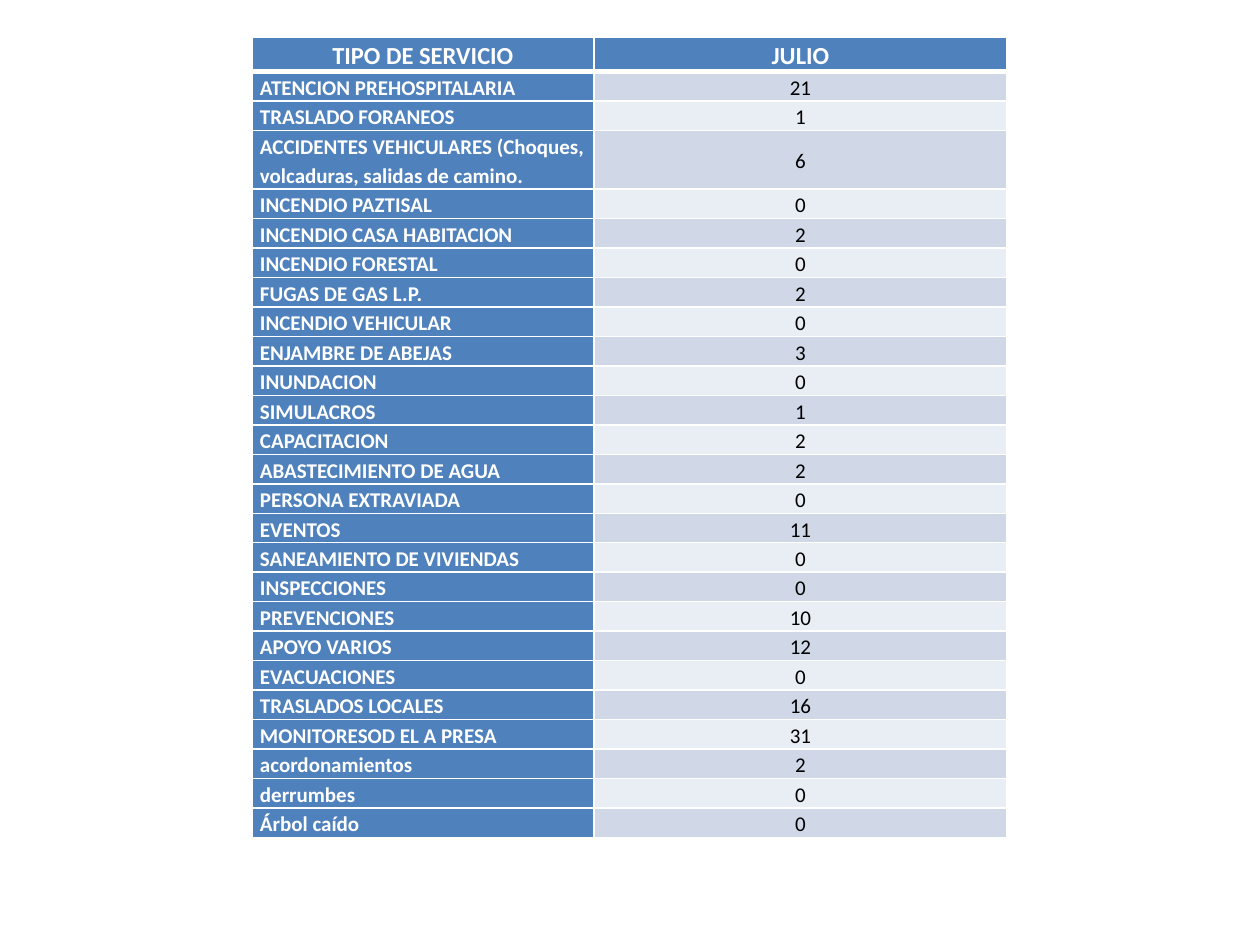
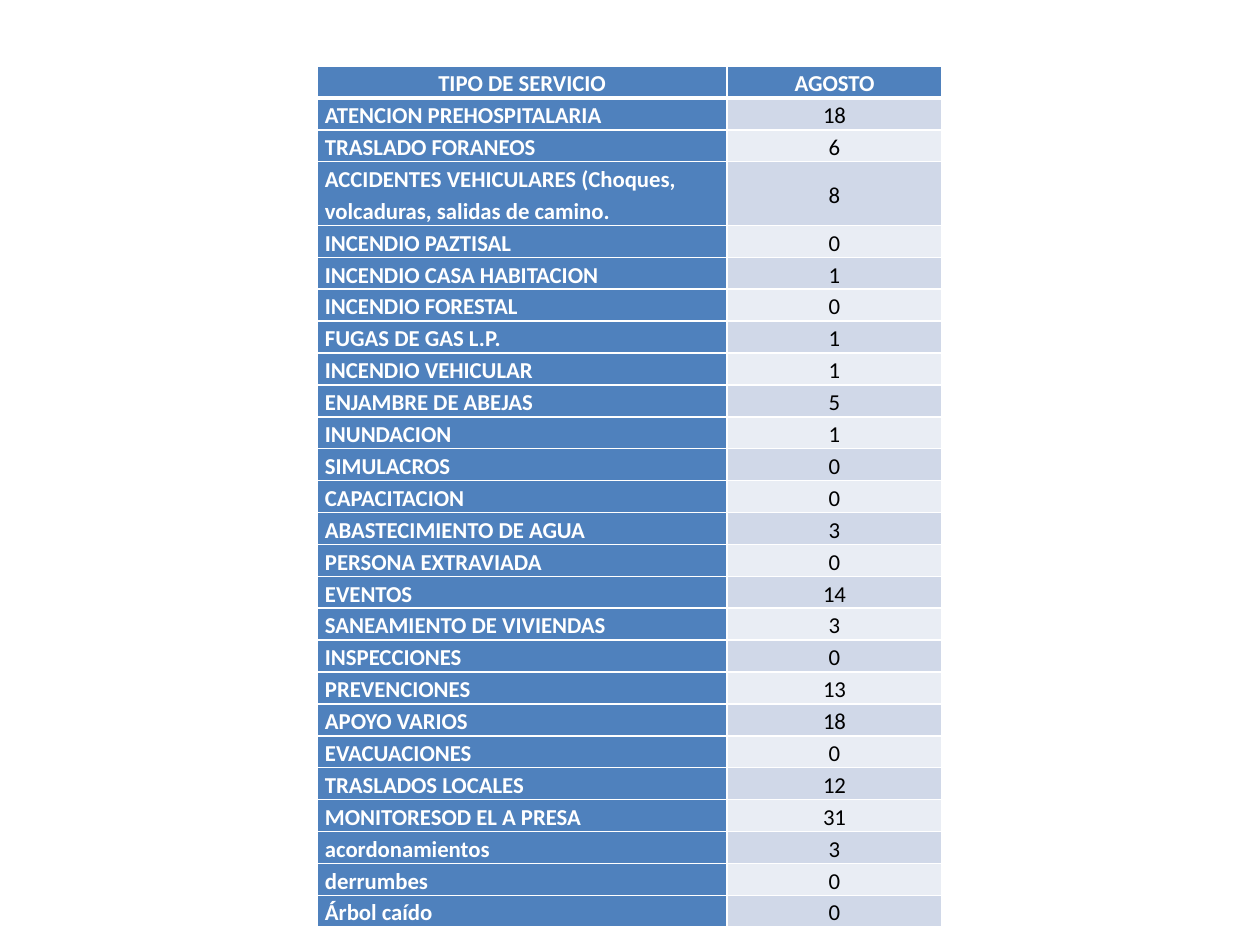
from lxml.etree import SubElement
from pptx import Presentation
from pptx.dml.color import RGBColor
from pptx.enum.text import MSO_ANCHOR, PP_ALIGN
from pptx.oxml.ns import qn
from pptx.util import Pt

PX = 914400 / 126
FONT = "Calibri"
BLUE, WHITE, BLACK = "4F81BD", "FFFFFF", "000000"
BANDS = ("D0D8E8", "E9EDF4")
TALL_ROW = 3

SERVICES = (
    "ATENCION PREHOSPITALARIA",
    "TRASLADO FORANEOS",
    "ACCIDENTES VEHICULARES (Choques, volcaduras, salidas de camino.",
    "INCENDIO PAZTISAL",
    "INCENDIO CASA HABITACION",
    "INCENDIO FORESTAL",
    "FUGAS DE GAS L.P.",
    "INCENDIO VEHICULAR",
    "ENJAMBRE DE ABEJAS",
    "INUNDACION",
    "SIMULACROS",
    "CAPACITACION",
    "ABASTECIMIENTO DE AGUA",
    "PERSONA EXTRAVIADA",
    "EVENTOS",
    "SANEAMIENTO DE VIVIENDAS",
    "INSPECCIONES",
    "PREVENCIONES",
    "APOYO VARIOS",
    "EVACUACIONES",
    "TRASLADOS LOCALES",
    "MONITORESOD EL A PRESA",
    "acordonamientos",
    "derrumbes",
    "Árbol caído",
)
JULY = (21, 1, 6, 0, 2, 0, 2, 0, 3, 0, 1, 2, 2, 0, 11, 0, 0, 10, 12, 0, 16, 31, 2, 0, 0)
AUGUST = (18, 6, 8, 0, 1, 0, 1, 1, 5, 1, 0, 0, 3, 0, 14, 3, 0, 13, 18, 0, 12, 31, 3, 0, 0)


def px(length):
    return round(length * PX)


def color(value):
    return RGBColor.from_string(value)


def write(cell, text, size, ink=WHITE, bold=True, align=PP_ALIGN.CENTER):
    paragraph = cell.text_frame.paragraphs[0]
    paragraph.alignment = align
    paragraph.line_spacing = 1.15
    run = paragraph.add_run()
    run.text = text
    run.font.name = FONT
    run.font.size = Pt(size)
    run.font.bold = bold
    run.font.color.rgb = color(ink)


def draw_borders(cell, top=1, bottom=1):
    properties = cell._tc.get_or_add_tcPr()
    for side, width in (("L", 1), ("R", 1), ("T", top), ("B", bottom)):
        line = SubElement(properties, qn(f"a:ln{side}"), w=str(Pt(width)))
        fill = SubElement(line, qn("a:solidFill"))
        SubElement(fill, qn("a:srgbClr"), val=WHITE)


def format_cell(cell, fill, **borders):
    cell.margin_left = cell.margin_right = px(8)
    cell.margin_top = cell.margin_bottom = 0
    draw_borders(cell, **borders)
    cell.fill.solid()
    cell.fill.fore_color.rgb = color(fill)


def add_services_table(slide, box, columns, row_height, month, counts, header_size, body_size):
    frame = slide.shapes.add_table(len(SERVICES) + 1, 2, *map(px, box))
    table = frame.table
    table.first_col = True
    for column, width in zip(table.columns, columns):
        column.width = px(width)
    for index, row in enumerate(table.rows):
        row.height = px(row_height * (2 if index == TALL_ROW else 1))
    frame.height = px(box[3])

    for column, heading in enumerate(("TIPO DE SERVICIO", month)):
        cell = table.cell(0, column)
        format_cell(cell, BLUE, bottom=3)
        write(cell, heading, header_size)

    for index, (service, count) in enumerate(zip(SERVICES, counts), start=1):
        service_cell, count_cell = table.cell(index, 0), table.cell(index, 1)
        top = 3 if index == 1 else 1
        format_cell(service_cell, BLUE, top=top)
        format_cell(count_cell, BANDS[(index - 1) % 2], top=top)
        write(service_cell, service, body_size, align=PP_ALIGN.LEFT)
        write(count_cell, str(count), body_size, ink=BLACK, bold=False)
    table.cell(TALL_ROW, 1).vertical_anchor = MSO_ANCHOR.MIDDLE


def main():
    deck = Presentation()
    deck.slide_width, deck.slide_height = px(1260), px(945)
    blank = deck.slide_layouts[6]
    add_services_table(deck.slides.add_slide(blank), (252, 37, 755, 823), (342, 413), 29,
                       "JULIO", JULY, header_size=14, body_size=12)
    add_services_table(deck.slides.add_slide(blank), (317, 66, 625, 843), (410, 215), 31,
                       "AGOSTO", AUGUST, header_size=13, body_size=13)
    deck.save("out.pptx")


if __name__ == "__main__":
    main()
